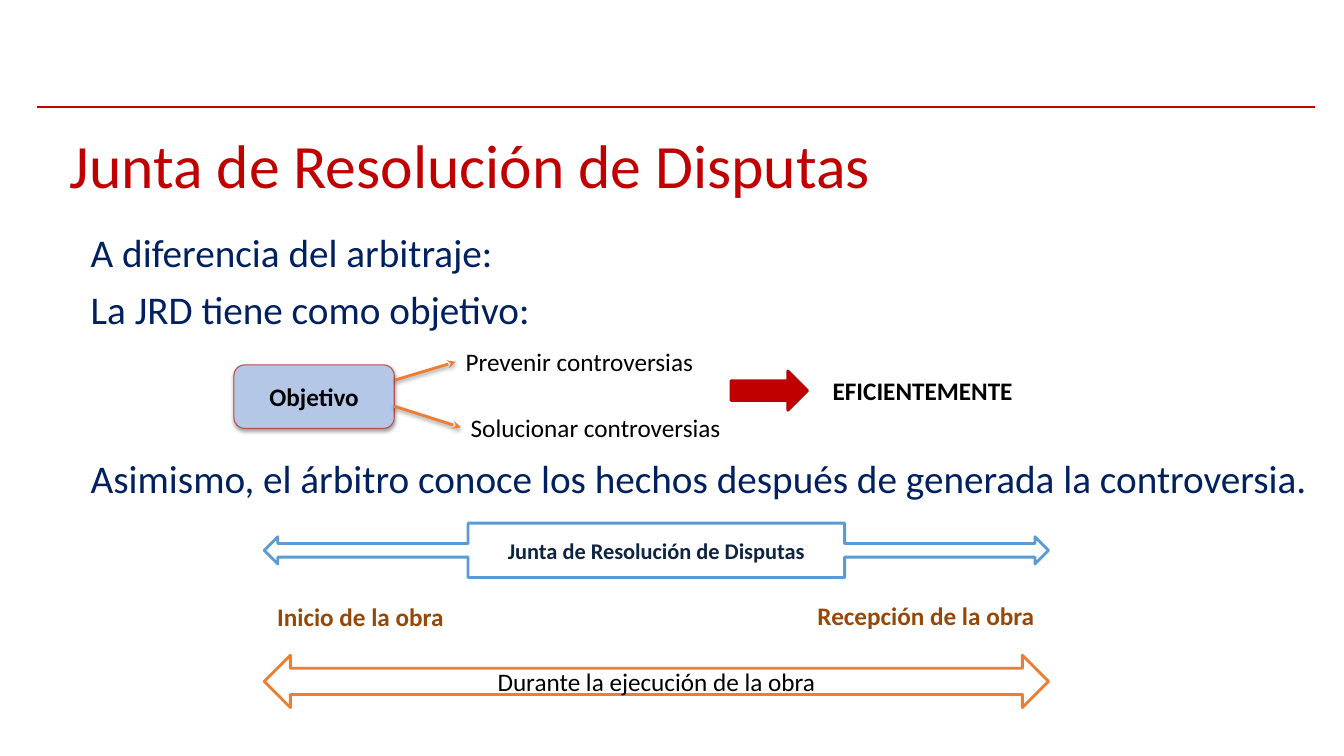
from dataclasses import dataclass, field
from typing import Any

from lxml.etree import SubElement
from pptx import Presentation
from pptx.dml.color import RGBColor
from pptx.enum.shapes import MSO_CONNECTOR as Link, MSO_SHAPE as Preset
from pptx.enum.text import MSO_ANCHOR as Anchor, MSO_AUTO_SIZE as Fit, PP_ALIGN as Align
from pptx.oxml.ns import qn
from pptx.util import Inches, Pt


@dataclass(frozen=True)
class Theme:
    font: str = "Calibri"
    red: str = "C00000"
    navy: str = "002060"
    black: str = "000000"
    white: str = "FFFFFF"
    brown: str = "974806"
    orange: str = "ED7D31"
    blue: str = "5B9BD5"
    ink: str = "0F243E"
    pale_blue: str = "B4C7E7"
    brick: str = "BD4B48"
    title_size: float = 44
    body_size: float = 28
    label_size: float = 18
    callout_size: float = 16
    thin: float = 0.75
    rule: float = 1.5
    thick: float = 2


THEME = Theme()
Box = tuple[float, float, float, float]


@dataclass(frozen=True)
class TextStyle:
    size: float = THEME.label_size
    color: str = THEME.black
    bold: bool = False


@dataclass(frozen=True)
class Label:
    text: str
    box: Box
    style: TextStyle = field(default_factory=TextStyle)


@dataclass(frozen=True)
class Figure:
    preset: Preset
    box: Box
    fill: str
    line: str
    width: float = THEME.thick
    adjustments: tuple[float, ...] = ()
    text: str = ""
    style: TextStyle = field(default_factory=TextStyle)
    shadow: bool = False


@dataclass(frozen=True)
class Stroke:
    start: tuple[float, float]
    end: tuple[float, float]
    color: str
    width: float
    arrow: bool = False


BOLD = TextStyle(bold=True)
MILESTONE = TextStyle(color=THEME.brown, bold=True)
SPAN_LEFT, SPAN_WIDTH = 2.62, 7.78

BODY_LINES = (
    ("A diferencia del arbitraje:", 10),
    ("La JRD tiene como objetivo:", 10),
    ("Asimismo, el árbitro conoce los hechos después de generada la controversia.", 91),
)

LABELS = (
    Label("Prevenir controversias", (4.52, 3.39, 2.88, 0.4)),
    Label("Solucionar controversias", (4.57, 4.04, 2.88, 0.4)),
    Label("EFICIENTEMENTE", (8.16, 3.67, 2.02, 0.4), BOLD),
    Label("Inicio de la obra", (2.65, 5.92, 1.92, 0.4), MILESTONE),
    Label("Recepción de la obra", (8.01, 5.91, 2.6, 0.4), MILESTONE),
)

FIGURES = (
    Figure(Preset.ROUNDED_RECTANGLE, (2.32, 3.62, 1.59, 0.63), THEME.pale_blue, THEME.brick,
           THEME.thin, (0.17,), "Objetivo", BOLD, shadow=True),
    Figure(Preset.RIGHT_ARROW, (7.25, 3.68, 0.76, 0.39), THEME.red, THEME.red),
    Figure(Preset.LEFT_RIGHT_ARROW_CALLOUT, (SPAN_LEFT, 5.19, SPAN_WIDTH, 0.54), THEME.white,
           THEME.blue, THEME.thick, (0.25, 0.25, 0.25, 0.48), "Junta de Resolución de Disputas",
           TextStyle(THEME.callout_size, THEME.ink, True)),
    Figure(Preset.LEFT_RIGHT_ARROW, (SPAN_LEFT, 6.5, SPAN_WIDTH, 0.52), THEME.white,
           THEME.orange, text="Durante la ejecución de la obra"),
)

STROKES = (
    Stroke((0.37, 1.06), (13.04, 1.06), THEME.red, THEME.rule),
    Stroke((3.92, 3.77), (4.52, 3.59), THEME.orange, THEME.thick, arrow=True),
    Stroke((3.91, 4.03), (4.57, 4.24), THEME.orange, THEME.thick, arrow=True),
)


def apply(target: Any, values: dict[str, Any]) -> None:
    for name, value in values.items():
        setattr(target, name, value)


def place(shape: Any, box: Box) -> None:
    apply(shape, dict(zip(("left", "top", "width", "height"), map(Inches, box))))


def paint(fill: Any, color: str) -> None:
    fill.solid()
    fill.fore_color.rgb = RGBColor.from_string(color)


def write(para: Any, text: str, style: TextStyle, **layout: Any) -> None:
    span = para.add_run()
    span.text = text
    apply(span.font, {"name": THEME.font, "size": Pt(style.size), "bold": style.bold})
    span.font.color.rgb = RGBColor.from_string(style.color)
    apply(para, layout)


def cast_shadow(effects: Any) -> None:
    shadow = SubElement(effects, qn("a:outerShdw"), blurRad=str(Pt(3.1)), dist=str(Pt(1.6)),
                        dir="5400000", rotWithShape="0")
    color = SubElement(shadow, qn("a:srgbClr"), val=THEME.black)
    SubElement(color, qn("a:alpha"), val="38000")


def fill_title(title: Any) -> None:
    place(title, (0.59, 1.2, 11.5, 0.94))
    frame = title.text_frame
    apply(frame, {"vertical_anchor": Anchor.MIDDLE, "auto_size": Fit.NONE, "word_wrap": True})
    write(frame.paragraphs[0], "Junta de Resolución de Disputas",
          TextStyle(THEME.title_size, THEME.red), alignment=Align.LEFT, line_spacing=0.9)


def fill_body(body: Any) -> None:
    place(body, (0.8, 2.27, 12.54, 4.82))
    paint(body.fill, THEME.white)
    frame = body.text_frame
    apply(frame, {"vertical_anchor": Anchor.TOP, "auto_size": Fit.NONE, "word_wrap": True})
    for index, (text, gap) in enumerate(BODY_LINES):
        para = frame.add_paragraph() if index else frame.paragraphs[0]
        write(para, text, TextStyle(THEME.body_size, THEME.navy),
              alignment=Align.LEFT, line_spacing=0.9, space_before=Pt(gap))
        properties = para._p.get_or_add_pPr()
        properties.set("marL", "0")
        properties.set("indent", "0")
        SubElement(properties, qn("a:buNone"))


def draw_label(page: Any, label: Label) -> None:
    box = page.shapes.add_textbox(*map(Inches, label.box))
    apply(box.text_frame, {"word_wrap": True, "auto_size": Fit.SHAPE_TO_FIT_TEXT})
    write(box.text_frame.paragraphs[0], label.text, label.style)


def draw_figure(page: Any, figure: Figure) -> None:
    shape = page.shapes.add_shape(figure.preset, *map(Inches, figure.box))
    for index, value in enumerate(figure.adjustments):
        shape.adjustments[index] = value
    paint(shape.fill, figure.fill)
    paint(shape.line.fill, figure.line)
    shape.line.width = Pt(figure.width)
    shape.shadow.inherit = False
    if figure.shadow:
        cast_shadow(shape.element.spPr.find(qn("a:effectLst")))
    if figure.text:
        apply(shape.text_frame, {"word_wrap": True, "vertical_anchor": Anchor.MIDDLE})
        write(shape.text_frame.paragraphs[0], figure.text, figure.style, alignment=Align.CENTER)


def draw_stroke(page: Any, stroke: Stroke) -> None:
    line = page.shapes.add_connector(Link.STRAIGHT, *map(Inches, stroke.start + stroke.end))
    paint(line.line.fill, stroke.color)
    line.line.width = Pt(stroke.width)
    properties = line.element.spPr
    effects = SubElement(properties, qn("a:effectLst"))
    if stroke.arrow:
        SubElement(properties.find(qn("a:ln")), qn("a:tailEnd"), type="stealth")
        cast_shadow(effects)


def main() -> None:
    deck = Presentation()
    apply(deck, {"slide_width": Inches(13.33), "slide_height": Inches(7.5)})
    page = deck.slides.add_slide(deck.slide_layouts[1])
    fill_title(page.shapes.title)
    fill_body(page.placeholders[1])
    for items, draw in ((FIGURES, draw_figure), (LABELS, draw_label), (STROKES, draw_stroke)):
        for item in items:
            draw(page, item)
    deck.save("out.pptx")


if __name__ == "__main__":
    main()
